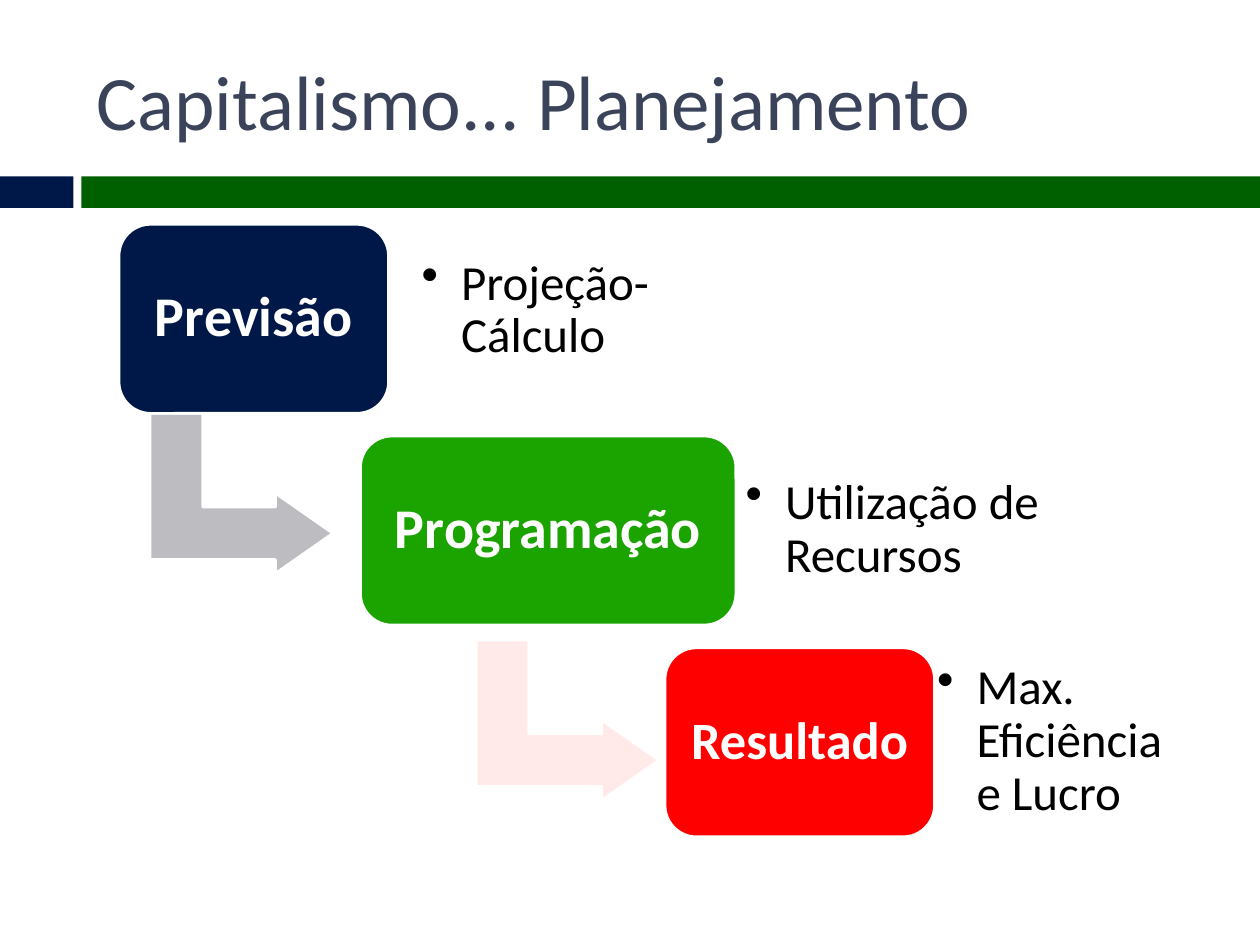
import pptx
import pptx.dml.color
import pptx.enum.shapes
import pptx.enum.text
import pptx.util
from lxml import etree

Pt = pptx.util.Pt
SHAPE = pptx.enum.shapes.MSO_SHAPE
ALIGN = pptx.enum.text.PP_ALIGN

COLORS = {
    "navy": "001848",
    "dark_green": "006000",
    "title": "3B435B",
    "gray": "BDBDC1",
    "green": "1BA400",
    "pink": "FFEAE9",
    "red": "FF0000",
    "white": "FFFFFF",
    "black": "000000",
}


def add_filled(kind, left, top, width, height, fill, outlined=True):
    shape = page.shapes.add_shape(kind, Pt(left), Pt(top), Pt(width), Pt(height))
    shape.shadow.inherit = False
    shape.fill.solid()
    shape.fill.fore_color.rgb = pptx.dml.color.RGBColor.from_string(COLORS[fill])
    if outlined:
        shape.line.color.rgb = pptx.dml.color.RGBColor.from_string(COLORS["white"])
        shape.line.width = Pt(1.5)
    else:
        shape.line.fill.background()
    return shape


def write_text(shape, text, size, color, align, inset, spacing=0.9, bold=False):
    """Fill a shape with one vertically centred paragraph and return it."""
    frame = shape.text_frame
    frame.word_wrap = True
    frame.vertical_anchor = pptx.enum.text.MSO_ANCHOR.MIDDLE
    frame.margin_left = frame.margin_right = Pt(inset)
    frame.margin_top = frame.margin_bottom = Pt(inset)
    para = frame.paragraphs[0]
    para.text = text
    para.alignment = align
    para.line_spacing = spacing
    para.font.name = "Calibri"
    para.font.size = Pt(size)
    para.font.bold = bold
    para.font.color.rgb = pptx.dml.color.RGBColor.from_string(COLORS[color])
    return para


deck = pptx.Presentation()
deck.slide_width, deck.slide_height = Pt(720), Pt(540)
page = deck.slides.add_slide(deck.slide_layouts[6])

# Header
add_filled(SHAPE.RECTANGLE, 0, 100.8, 42, 18, "navy", outlined=False)
add_filled(SHAPE.RECTANGLE, 46.5, 100.8, 673.5, 18, "dark_green", outlined=False)
title = page.shapes.add_textbox(Pt(48), Pt(18), Pt(642), Pt(78))
write_text(title, "Capitalismo... Planejamento", 44, "title", ALIGN.LEFT, 7.2, spacing=1.0)

# Steps: label, size, fill, box left and width, detail, detail frame, arrow
steps = [
    ("Previsão", 32, "navy", 68, 154, "Projeção- Cálculo", (232.5, 134, 230.5), (92.2, 229.7, "gray")),
    ("Programação", 32, "green", 206, 214.5, "Utilização de Recursos", (417.6, 259.2, 258.5), (278.6, 359.3, "pink")),
    ("Resultado", 30, "red", 380, 154, "Max. Eficiência e Lucro", (527, 380.2, 162), None),
]
FIRST_TOP, STEP_HEIGHT, STEP_PITCH = 128.2, 108, 121
DETAIL_HEIGHT, INDENT = 87, 22.5

for index, (label, size, fill, left, width, detail, detail_frame, arrow) in enumerate(steps):
    if arrow:
        arrow_left, arrow_top, arrow_fill = arrow
        bent = add_filled(SHAPE.BENT_UP_ARROW, arrow_left, arrow_top, 91.5, 104.4, arrow_fill)
        bent.rotation = 90
        for number, value in enumerate((0.328, 0.25, 0.358)):
            bent.adjustments[number] = value

    box = add_filled(SHAPE.ROUNDED_RECTANGLE, left, FIRST_TOP + index * STEP_PITCH, width, STEP_HEIGHT, fill)
    box.adjustments[0] = 0.167
    write_text(box, label, size, "white", ALIGN.CENTER, 9, bold=True)

    detail_left, detail_top, detail_width = detail_frame
    note = page.shapes.add_textbox(Pt(detail_left), Pt(detail_top), Pt(detail_width), Pt(DETAIL_HEIGHT))
    para = write_text(note, detail, 28, "black", ALIGN.LEFT, 8.5)
    properties = para._p.get_or_add_pPr()
    properties.set("marL", str(Pt(INDENT)))
    properties.set("indent", str(-Pt(INDENT)))
    bullet = etree.Element(pptx.oxml.ns.qn("a:buChar"), char="•")
    properties.find(pptx.oxml.ns.qn("a:lnSpc")).addnext(bullet)

deck.save("out.pptx")
